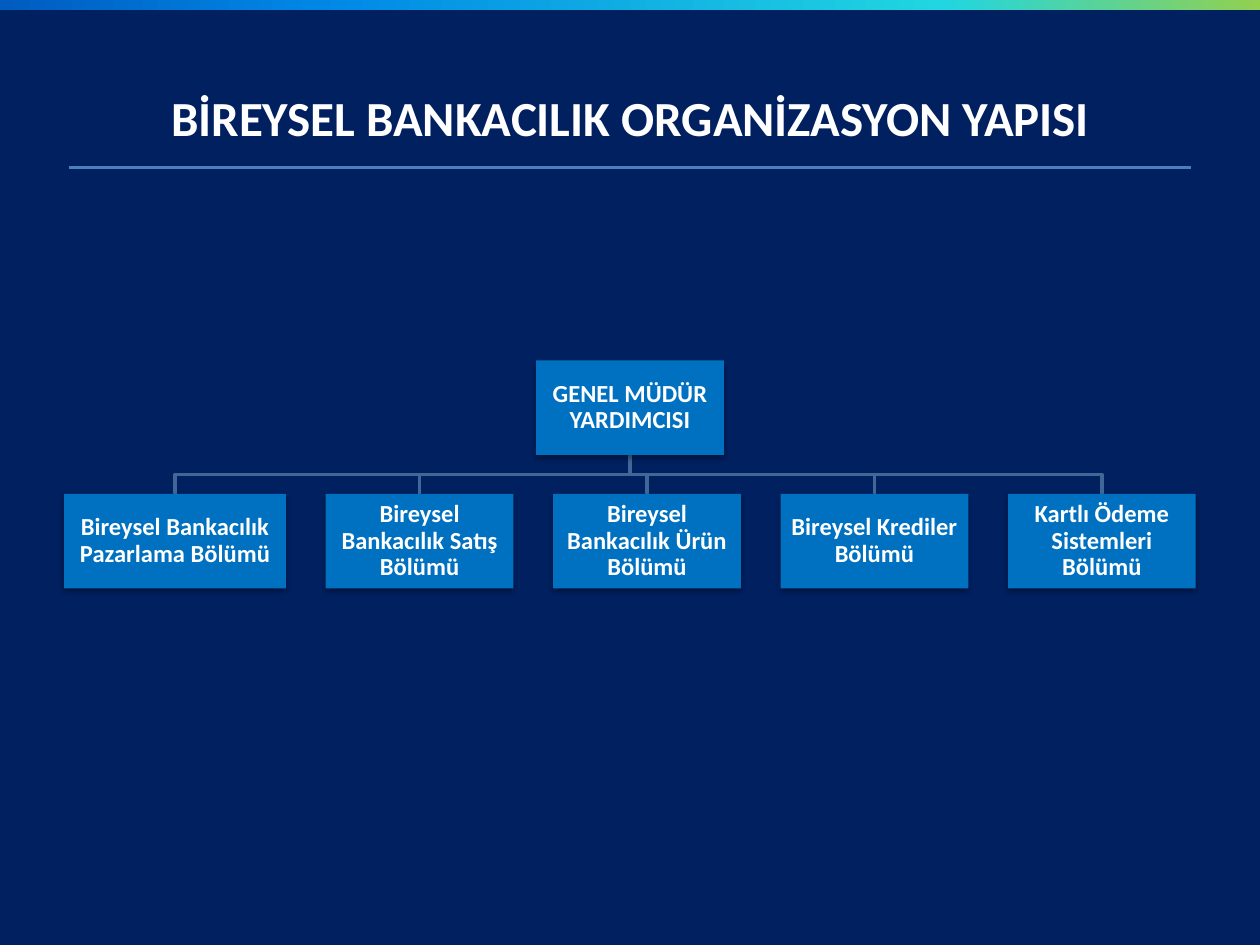
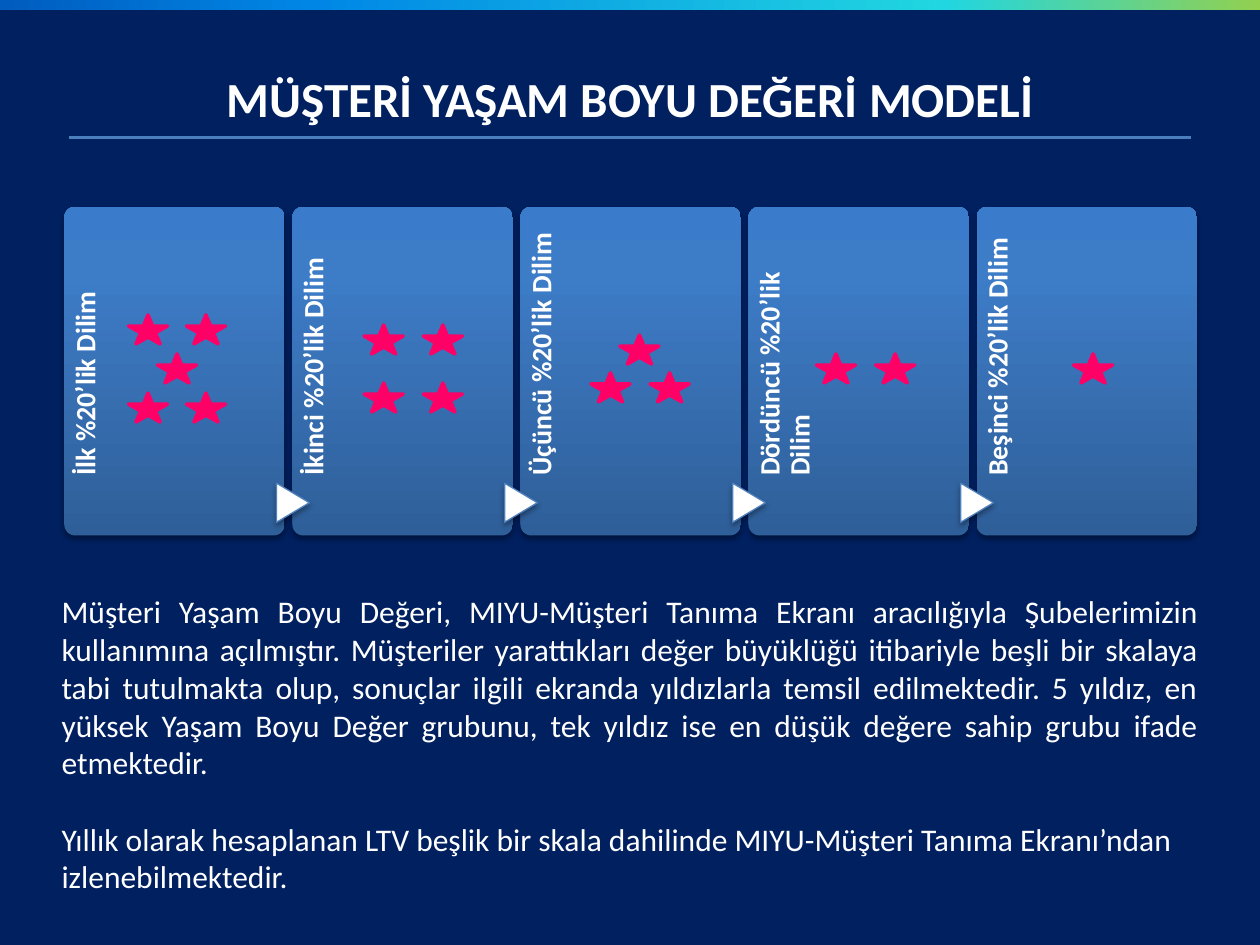
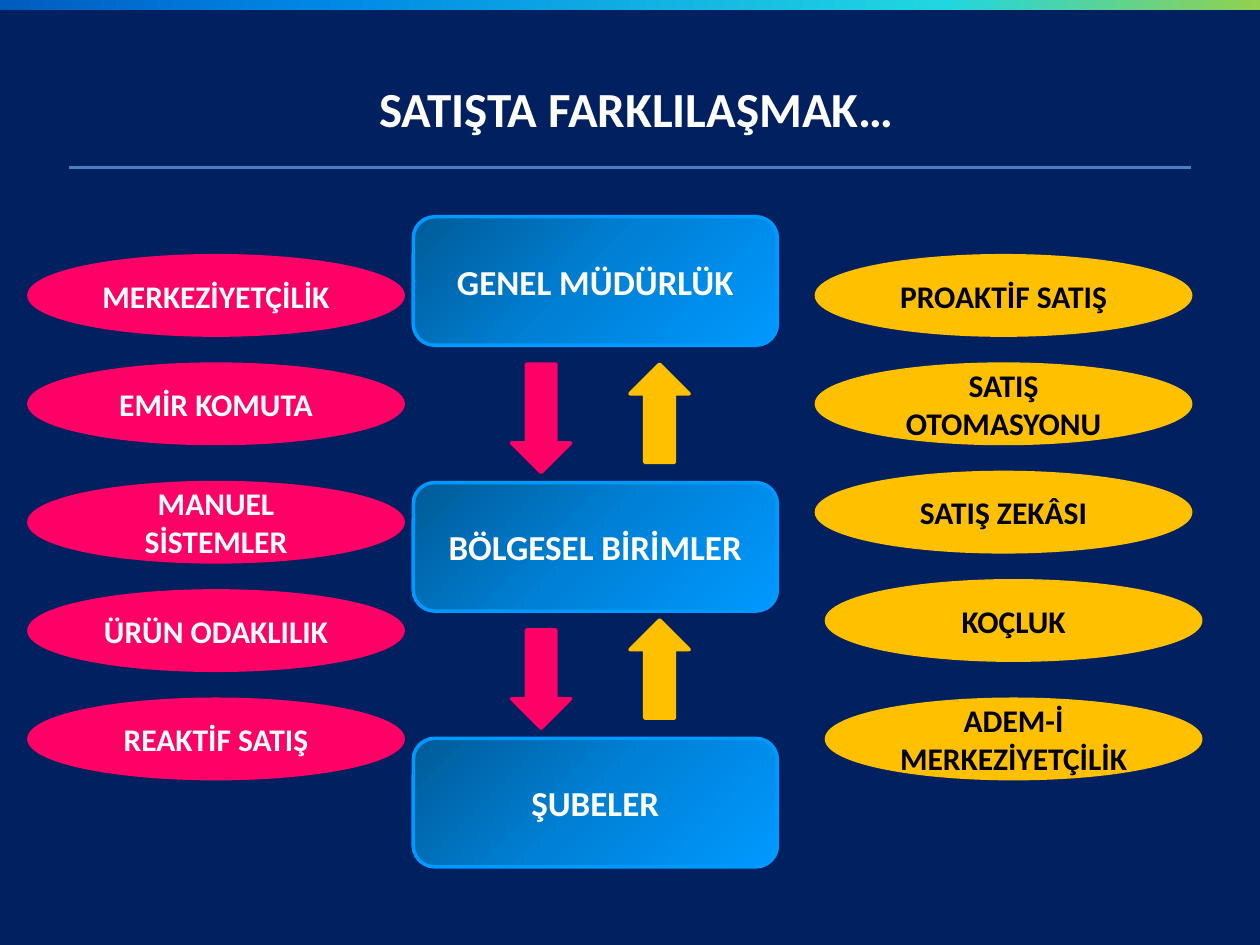
from collections import namedtuple

from lxml.etree import SubElement
from pptx import Presentation
from pptx.dml.color import RGBColor
from pptx.enum.shapes import MSO_CONNECTOR, MSO_SHAPE
from pptx.enum.text import MSO_ANCHOR, MSO_AUTO_SIZE, PP_ALIGN
from pptx.oxml.ns import qn
from pptx.util import Pt

EMU_PER_PX = 9144  # 100 px to the inch
FONT = "Calibri"
NAVY, WHITE, BLACK = "002060", "FFFFFF", "000000"
PINK, AMBER, BLUE = "FF0066", "FFC000", "0070C0"
RULE, ELBOW, OUTLINE, BRIGHT = "4B7EBC", "3F6797", "4F81BD", "0099FF"
BAND_STOPS = [(0, "92D050"), (25, "21D6E0"), (75, "0087E6"), (100, "005CBF")]
CARD_STOPS = [(0, "2F5F99"), (80, "3D7CC7"), (100, "3A7CCB")]
LEVEL_STOPS = [(0, "005B97"), (50, "0081D7"), (100, "0099FF")]

Box = namedtuple("Box", "left top width height")


# Shared helpers

def px(length):
    return round(length * EMU_PER_PX)


def emu(box):
    return [px(length) for length in box]


def color(hex_value):
    return RGBColor.from_string(hex_value)


def set_line(line, hex_value, width=2):
    line.color.rgb = color(hex_value)
    line.width = Pt(width)


def set_gradient(shape, stops, angle):
    shape.fill.gradient()
    shape.fill.gradient_angle = 360 - angle
    stop_list = shape.element.spPr.find(qn("a:gradFill")).find(qn("a:gsLst"))
    stop_list.clear()
    for position, hex_value in stops:
        stop = SubElement(stop_list, qn("a:gs"), pos=str(position * 1000))
        SubElement(stop, qn("a:srgbClr"), val=hex_value)


def add_shadow(shape):
    effects = shape.element.spPr.find(qn("a:effectLst"))
    shadow = SubElement(effects, qn("a:outerShdw"), blurRad=str(Pt(3.1)),
                        dist=str(Pt(1.8)), dir="5400000", rotWithShape="0")
    tint = SubElement(shadow, qn("a:srgbClr"), val=BLACK)
    SubElement(tint, qn("a:alpha"), val="35000")


def add_part(page, kind, box, fill=None, line=None, width=2, shadow=False):
    shape = page.shapes.add_shape(kind, *emu(box))
    shape.shadow.inherit = False
    if fill:
        shape.fill.solid()
        shape.fill.fore_color.rgb = color(fill)
    if line:
        set_line(shape.line, line, width)
    else:
        shape.line.fill.background()
    if shadow:
        add_shadow(shape)
    return shape


def write(shape, text, size, hex_value=WHITE, bold=True, align=PP_ALIGN.CENTER,
          anchor=MSO_ANCHOR.MIDDLE, spacing=None, insets=None):
    frame = shape.text_frame
    frame.text = text
    frame.word_wrap = True
    frame.auto_size = MSO_AUTO_SIZE.NONE
    frame.vertical_anchor = anchor
    if insets:
        (frame.margin_left, frame.margin_top,
         frame.margin_right, frame.margin_bottom) = emu(insets)
    for para in frame.paragraphs:
        para.alignment = align
        if spacing:
            para.line_spacing = spacing
        for span in para.runs:
            span.font.name = FONT
            span.font.size = Pt(size)
            span.font.bold = bold
            span.font.color.rgb = color(hex_value)


def add_page(deck, title, title_box, rule_top):
    page = deck.slides.add_slide(deck.slide_layouts.get_by_name("Title Only"))
    # Top band
    band = add_part(page, MSO_SHAPE.RECTANGLE, Box(0, 0, 1000, 8))
    set_gradient(band, BAND_STOPS, 180)
    # Title and the rule below it
    holder = page.shapes.title
    holder.left, holder.top, holder.width, holder.height = emu(title_box)
    write(holder, title, 28)
    rule = page.shapes.add_connector(
        MSO_CONNECTOR.STRAIGHT, px(55), px(rule_top), px(945), px(rule_top))
    set_line(rule.line, RULE)
    SubElement(rule.element.spPr, qn("a:effectLst"))
    return page


# Organisation chart

def add_org_box(page, box, text):
    shape = add_part(page, MSO_SHAPE.RECTANGLE, box, BLUE, shadow=True)
    write(shape, text, 14, spacing=0.9, insets=(1, 1, 1, 1))


def add_elbow(page, start, end):
    middle = (start[1] + end[1]) / 2
    builder = page.shapes.build_freeform(px(start[0]), px(start[1]))
    corners = [(start[0], middle), (end[0], middle), end]
    builder.add_line_segments([(px(x), px(y)) for x, y in corners], close=False)
    elbow = builder.convert_to_shape()
    elbow.shadow.inherit = False
    elbow.fill.background()
    set_line(elbow.line, ELBOW)


def add_org_chart(page, area, head, departments):
    height, head_width = 75, 149
    gap = (area.width - sum(width for _, width in departments)) / (len(departments) - 1)
    center = area.left + area.width / 2
    row_top = area.top + area.height - height
    boxes = []
    left = area.left
    for _, width in departments:
        boxes.append(Box(left, row_top, width, height))
        left += width + gap
    for box in boxes:
        add_elbow(page, (center, area.top + height), (box.left + box.width / 2, row_top))
    add_org_box(page, Box(center - head_width / 2, area.top, head_width, height), head)
    for box, (name, _) in zip(boxes, departments):
        add_org_box(page, box, name)


def build_organisation(deck):
    page = add_page(deck, "BİREYSEL BANKACILIK ORGANİZASYON YAPISI",
                    Box(50, 30, 900, 125), 133)
    add_org_chart(page, Box(51, 286, 898, 181), "GENEL MÜDÜR YARDIMCISI", [
        ("Bireysel Bankacılık Pazarlama Bölümü", 176),
        ("Bireysel Bankacılık Satış Bölümü", 149),
        ("Bireysel Bankacılık Ürün Bölümü", 149),
        ("Bireysel Krediler Bölümü", 149),
        ("Kartlı Ödeme Sistemleri Bölümü", 149),
    ])


# Customer value model

SEGMENTS = [  # label, star offsets within the card
    ("İlk %20’lik Dilim", [(74, 117), (51, 86), (97, 86), (51, 148), (97, 148)]),
    ("İkinci %20’lik Dilim", [(57, 94), (104, 94), (57, 140), (104, 140)]),
    ("Üçüncü %20’lik Dilim", [(79, 102), (103, 132), (56, 132)]),
    ("Dördüncü %20’lik Dilim", [(54, 117), (101, 117)]),
    ("Beşinci %20’lik Dilim", [(77, 117)]),
]

EXPLANATION = [
    "Müşteri Yaşam Boyu Değeri, MIYU-Müşteri Tanıma Ekranı aracılığıyla "
    "Şubelerimizin kullanımına açılmıştır. Müşteriler yarattıkları değer "
    "büyüklüğü itibariyle beşli bir skalaya tabi tutulmakta olup, sonuçlar "
    "ilgili ekranda yıldızlarla temsil edilmektedir. 5 yıldız, en yüksek Yaşam "
    "Boyu Değer grubunu, tek yıldız ise en düşük değere sahip grubu ifade "
    "etmektedir.",
    "Yıllık olarak hesaplanan LTV beşlik bir skala dahilinde MIYU-Müşteri "
    "Tanıma Ekranı’ndan izlenebilmektedir.",
]


def add_segment_card(page, box, label, stars, has_arrow):
    card = add_part(page, MSO_SHAPE.ROUNDED_RECTANGLE, box, shadow=True)
    card.adjustments[0] = 0.05
    set_gradient(card, CARD_STOPS, 270)
    # Upright label
    caption = page.shapes.add_textbox(
        *emu(Box(box.left - 90, box.top + 89, 214, 35)))
    caption.rotation = 270
    write(caption, label, 16, align=PP_ALIGN.LEFT, anchor=MSO_ANCHOR.TOP,
          spacing=0.9, insets=(0, 6, 8, 0))
    # Arrow from the card before
    if has_arrow:
        arrow = add_part(page, MSO_SHAPE.FLOWCHART_EXTRACT,
                         Box(box.left - 15, box.top + 222, 31, 26),
                         WHITE, OUTLINE, 0.75, shadow=True)
        arrow.rotation = 90
    for across, down in stars:
        add_part(page, MSO_SHAPE.STAR_5_POINT,
                 Box(box.left + across, box.top + down, 31, 23), PINK, PINK)


def add_explanation(page, box):
    body = page.shapes.add_textbox(*emu(box))
    write(body, "\n".join(EXPLANATION), 18, bold=False,
          align=PP_ALIGN.JUSTIFY, anchor=MSO_ANCHOR.TOP)
    closing = body.text_frame.paragraphs[-1]
    closing.alignment = PP_ALIGN.LEFT
    closing.space_before = Pt(22)


def build_value_model(deck):
    page = add_page(deck, "MÜŞTERİ YAŞAM BOYU DEĞERİ MODELİ",
                    Box(50, 46, 900, 64), 109)
    for index, (label, stars) in enumerate(SEGMENTS):
        add_segment_card(page, Box(51 + index * 181, 164, 175, 261),
                         label, stars, index > 0)
    add_explanation(page, Box(39, 465, 922, 252))


# Sales differentiation

def add_levels(page, area):
    levels = [("GENEL MÜDÜRLÜK", 0), ("BÖLGESEL BİRİMLER", 211), ("ŞUBELER", 414)]
    for name, down in levels:
        level = add_part(page, MSO_SHAPE.ROUNDED_RECTANGLE,
                         Box(area.left, area.top + down, area.width, 102), line=BRIGHT)
        set_gradient(level, LEVEL_STOPS, 45)
        write(level, name, 20)
    # Orders go down, initiative goes up
    arrows = [
        (MSO_SHAPE.DOWN_ARROW, PINK, 78, 117, 86),
        (MSO_SHAPE.DOWN_ARROW, PINK, 78, 328, 78),
        (MSO_SHAPE.UP_ARROW, AMBER, 172, 117, 78),
        (MSO_SHAPE.UP_ARROW, AMBER, 172, 320, 78),
    ]
    for kind, fill, across, down, height in arrows:
        add_part(page, kind, Box(area.left + across, area.top + down, 47, height),
                 fill, fill)


def add_traits(page, area, traits, fill, text_color):
    for name, across, down in traits:
        oval = add_part(page, MSO_SHAPE.OVAL,
                        Box(area.left + across, area.top + down, area.width, 63),
                        fill, fill)
        write(oval, name, 18, text_color)


def build_sales(deck):
    page = add_page(deck, "SATIŞTA FARKLILAŞMAK…", Box(55, 23, 900, 125), 133)
    add_levels(page, Box(328, 172, 289, 516))
    add_traits(page, Box(23, 203, 297, 415), [
        ("MERKEZİYETÇİLİK", 0, 0),
        ("EMİR KOMUTA", 0, 86),
        ("MANUEL SİSTEMLER", 0, 180),
        ("ÜRÜN ODAKLILIK", 0, 266),
        ("REAKTİF SATIŞ", 0, 352),
    ], PINK, WHITE)
    add_traits(page, Box(648, 203, 297, 415), [
        ("PROAKTİF SATIŞ", 0, 0),
        ("SATIŞ OTOMASYONU", 0, 86),
        ("SATIŞ ZEKÂSI", 0, 172),
        ("KOÇLUK", 8, 258),
        ("ADEM-İ MERKEZİYETÇİLİK", 8, 352),
    ], AMBER, BLACK)


def main():
    deck = Presentation()
    deck.slide_width, deck.slide_height = px(1000), px(750)
    backdrop = deck.slide_master.background.fill
    backdrop.solid()
    backdrop.fore_color.rgb = color(NAVY)
    build_organisation(deck)
    build_value_model(deck)
    build_sales(deck)
    deck.save("out.pptx")


if __name__ == "__main__":
    main()
